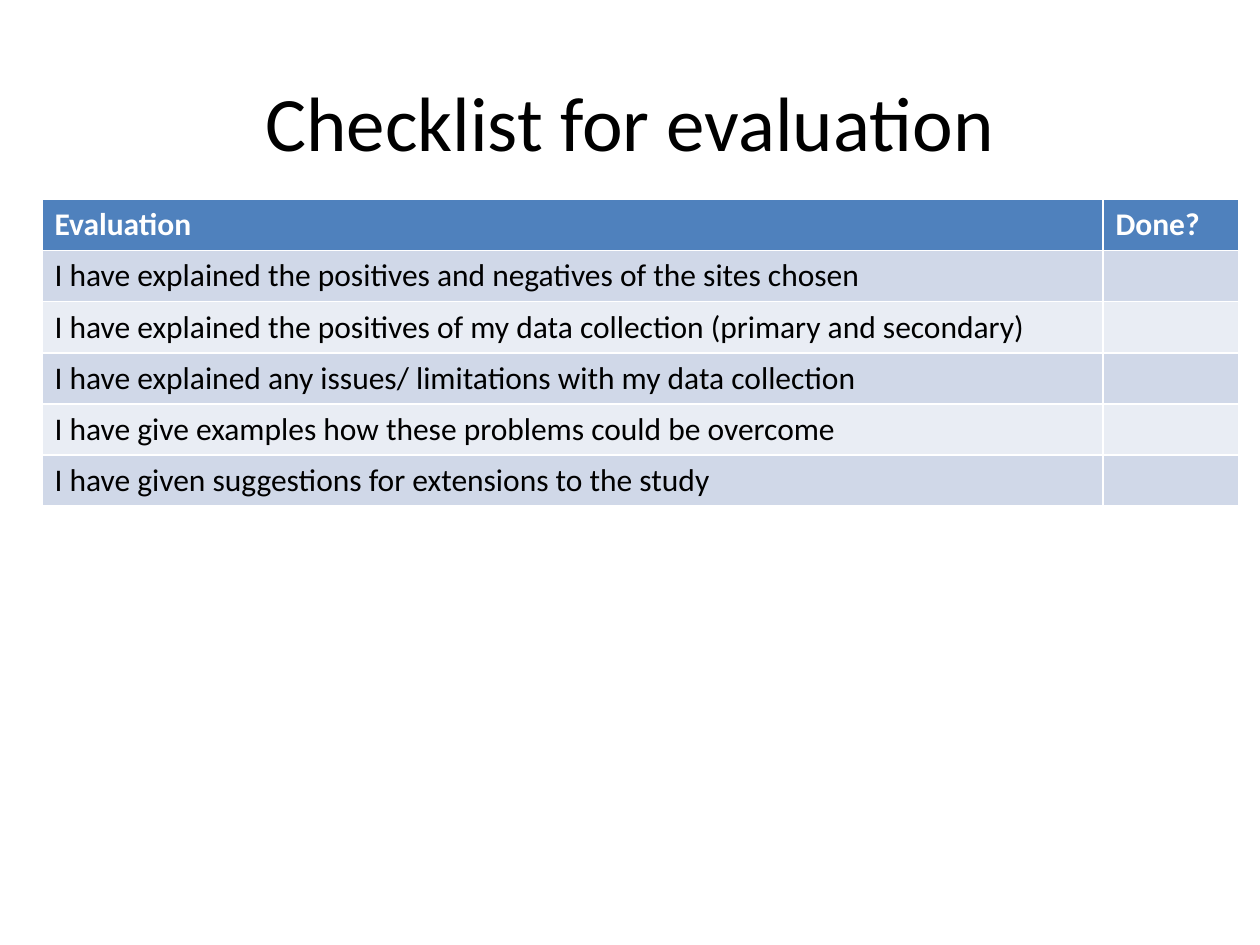
"""Build the evaluation checklist slide."""
from dataclasses import dataclass

from pptx import Presentation
from pptx.dml.color import RGBColor
from pptx.enum.text import MSO_ANCHOR, PP_ALIGN
from pptx.util import Pt

MIDDLE = MSO_ANCHOR.MIDDLE
CENTER = PP_ALIGN.CENTER
BLACK = RGBColor(0x00, 0x00, 0x00)
WHITE = RGBColor(0xFF, 0xFF, 0xFF)
HEADER_BLUE = RGBColor(0x4F, 0x81, 0xBD)
BAND_DARK = RGBColor(0xD0, 0xD8, 0xE8)
BAND_LIGHT = RGBColor(0xE9, 0xED, 0xF4)
FONT_NAME = "Calibri"
TITLE_ONLY = 5
COLUMN_WIDTHS = (606.25, 77.75)
ROW_HEIGHT = 29.2


@dataclass(frozen=True)
class ChecklistRow:
    statement: str
    fill: RGBColor
    done: str = ""
    color: RGBColor = BLACK
    bold: bool = False


STATEMENTS = (
    "I have explained the positives and negatives of the sites chosen",
    "I have explained the positives of my data collection (primary and secondary)",
    "I have explained any issues/ limitations with my data collection",
    "I have give examples how these problems could be overcome",
    "I have given suggestions for extensions to the study",
)
ROWS = [ChecklistRow("Evaluation", HEADER_BLUE, "Done?", WHITE, True)] + [
    ChecklistRow(statement, BAND_LIGHT if index % 2 else BAND_DARK)
    for index, statement in enumerate(STATEMENTS)
]


def format_paragraph(paragraph, size: float, color: RGBColor, bold: bool = False) -> None:
    paragraph.font.name = FONT_NAME
    paragraph.font.size = Pt(size)
    paragraph.font.bold = bold
    paragraph.font.color.rgb = color


def add_title(slide, text: str) -> None:
    title = slide.shapes.title
    title.left, title.top, title.width, title.height = Pt(36), Pt(24), Pt(648), Pt(90)
    title.text_frame.text = text
    title.text_frame.vertical_anchor = MIDDLE
    paragraph = title.text_frame.paragraphs[0]
    paragraph.alignment = CENTER
    format_paragraph(paragraph, 44, BLACK)


def add_checklist(slide, rows: list[ChecklistRow]) -> None:
    table = slide.shapes.add_table(
        len(rows), len(COLUMN_WIDTHS), Pt(24), Pt(114),
        Pt(sum(COLUMN_WIDTHS)), Pt(ROW_HEIGHT * len(rows)),
    ).table
    for column, width in zip(table.columns, COLUMN_WIDTHS):
        column.width = Pt(width)
    for table_row, row in zip(table.rows, rows):
        table_row.height = Pt(ROW_HEIGHT)
        for cell, text in zip(table_row.cells, (row.statement, row.done)):
            cell.text = text
            cell.fill.solid()
            cell.fill.fore_color.rgb = row.fill
            format_paragraph(cell.text_frame.paragraphs[0], 18, row.color, row.bold)


def main() -> None:
    presentation = Presentation()
    presentation.slide_width, presentation.slide_height = Pt(720), Pt(540)
    slide = presentation.slides.add_slide(presentation.slide_layouts[TITLE_ONLY])
    add_title(slide, "Checklist for evaluation")
    add_checklist(slide, ROWS)
    presentation.save("out.pptx")


if __name__ == "__main__":
    main()
